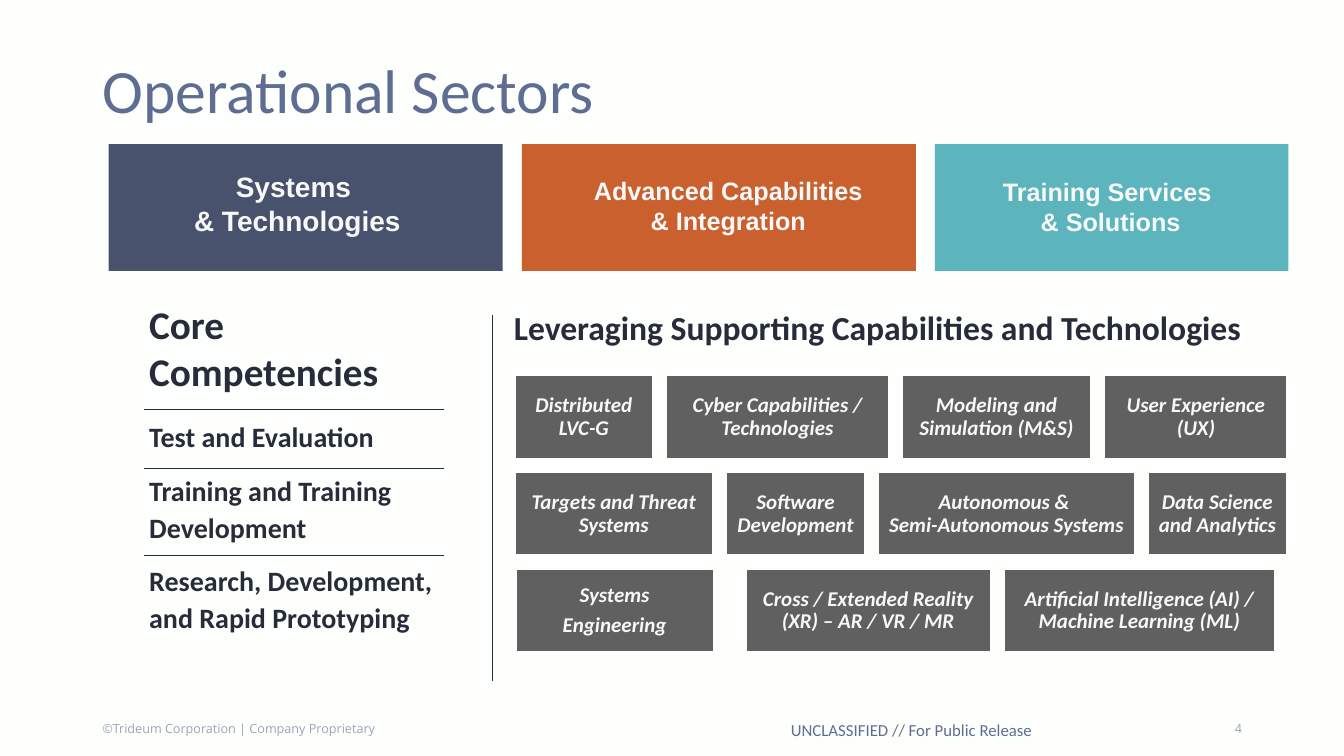
from lxml.etree import SubElement
from pptx import Presentation
from pptx.dml.color import RGBColor
from pptx.enum.shapes import MSO_CONNECTOR, MSO_SHAPE
from pptx.enum.text import MSO_ANCHOR, PP_ALIGN
from pptx.oxml.ns import qn
from pptx.util import Cm, Pt

PAPER = RGBColor(0xFD, 0xFF, 0xFD)
SLATE = RGBColor(0x60, 0x6D, 0x92)
INK = RGBColor(0x27, 0x2C, 0x3B)
MIST = RGBColor(0x9D, 0xA3, 0xB6)
NAVY = RGBColor(0x48, 0x52, 0x6D)
RUST = RGBColor(0xC9, 0x60, 0x2E)
TEAL = RGBColor(0x5C, 0xB5, 0xBD)
GREY = RGBColor(0x5F, 0x60, 0x5F)
PALE = RGBColor(0xF7, 0xF8, 0xF7)

# Lengths are in centimetres; \v is a line break within a paragraph.
SECTOR_LEFT, SECTOR_TOP, SECTOR_HEIGHT, SECTOR_GAP = 2.74, 3.63, 3.2, 0.48
# width, fill, label, label box, text size, top inset
SECTORS = [
    (9.93, NAVY, "Systems \v& Technologies", (4.17, 4.24, 6.65, 1.83), 20, 0.03),
    (9.93, RUST, "Advanced Capabilities & Integration", (14.76, 4.24, 7.19, 1.8), 18, 0.18),
    (8.91, TEAL, "Training Services \v& Solutions", (23.75, 4.42, 8.48, 1.65), 18, 0.03),
]

COMPETENCIES = [
    "Test and Evaluation",
    "Training and Training Development",
    "Research, Development, \vand Rapid Prototyping",
]

# start and end of each rule
RULES = [((12.42, 7.95), (12.42, 17.17))] + [
    ((3.63, y), (11.18, y)) for y in (10.31, 11.79, 14.0)
]

CAPABILITY_TOP, CAPABILITY_HEIGHT, CAPABILITY_PITCH, CAPABILITY_GAP = 9.47, 2.08, 2.44, 0.35
# row, left edge, (paragraphs, width) of neighbouring boxes
CAPABILITIES = [
    (0, 12.98, [
        (["Distributed LVC-G"], 3.47),
        (["Cyber Capabilities / Technologies"], 5.59),
        (["Modeling and Simulation (M&S)"], 4.75),
        (["User Experience (UX)"], 4.6),
    ]),
    (1, 12.98, [
        (["Targets and Threat Systems"], 4.98),
        (["Software Development"], 3.48),
        (["Autonomous & \vSemi-Autonomous Systems"], 6.45),
        (["Data Science and Analytics"], 3.48),
    ]),
    (2, 13.0, [(["Systems", "Engineering"], 4.98)]),
    (2, 18.8, [
        (["Cross / Extended Reality (XR) – AR / VR / MR"], 6.16),
        (["Artificial Intelligence (AI) / Machine Learning (ML)"], 6.81),
    ]),
]


def write(sp, paragraphs, size, color, font="Calibri", bold=False, italic=False,
          align=PP_ALIGN.LEFT, anchor=MSO_ANCHOR.TOP, spacing=None, after=0, margins=None):
    """Fill a shape with paragraphs; margins are left, top, right, bottom in cm."""
    tf = sp.text_frame
    tf.word_wrap = True
    tf.vertical_anchor = anchor
    if margins:
        tf.margin_left, tf.margin_top, tf.margin_right, tf.margin_bottom = map(Cm, margins)
    for i, text in enumerate(paragraphs):
        p = tf.add_paragraph() if i else tf.paragraphs[0]
        p.text = text
        p.alignment = align
        p.line_spacing = spacing
        p.space_after = Pt(after)
        p.font.name, p.font.size = font, Pt(size)
        p.font.bold, p.font.italic = bold, italic
        p.font.color.rgb = color


def add_text(s, box, paragraphs, size, color, **style):
    write(s.shapes.add_textbox(*map(Cm, box)), paragraphs, size, color, **style)


def add_block(s, box, fill):
    sp = s.shapes.add_shape(MSO_SHAPE.RECTANGLE, *map(Cm, box))
    sp.shadow.inherit = False
    sp.fill.solid()
    sp.fill.fore_color.rgb = fill
    sp.line.fill.background()
    return sp


def add_rule(s, start, end):
    line = s.shapes.add_connector(MSO_CONNECTOR.STRAIGHT, *map(Cm, start + end))
    line.line.color.rgb = INK
    line.line.width = Pt(0.5)
    SubElement(line._element.spPr, qn("a:effectLst"))


def add_sectors(s):
    left = SECTOR_LEFT
    for width, fill, label, label_box, size, inset in SECTORS:
        add_block(s, (left, SECTOR_TOP, width, SECTOR_HEIGHT), fill)
        add_text(s, label_box, [label], size, PALE, font="Arial", bold=True,
                 align=PP_ALIGN.CENTER, margins=(0, inset, 0, 0))
        left += width + SECTOR_GAP


def add_capabilities(s):
    for row, left, boxes in CAPABILITIES:
        top = CAPABILITY_TOP + row * CAPABILITY_PITCH
        for paragraphs, width in boxes:
            sp = add_block(s, (left, top, width, CAPABILITY_HEIGHT), GREY)
            sp.line.color.rgb = PAPER
            sp.line.width = Pt(1)
            write(sp, paragraphs, 15, PALE, bold=True, italic=True, align=PP_ALIGN.CENTER,
                  anchor=MSO_ANCHOR.MIDDLE, spacing=0.9, after=5.25, margins=[0.15] * 4)
            left += width + CAPABILITY_GAP


def main():
    prs = Presentation()
    prs.slide_width, prs.slide_height = Cm(33.87), Cm(19.05)
    s = prs.slides.add_slide(prs.slide_layouts[6])
    s.background.fill.solid()
    s.background.fill.fore_color.rgb = PAPER

    add_text(s, (2.33, 1.02, 29.21, 2.46), ["Operational Sectors"], 44, SLATE,
             anchor=MSO_ANCHOR.MIDDLE)
    add_sectors(s)
    add_text(s, (3.51, 7.44, 8.13, 2.64), ["Core Competencies"], 28, INK, bold=True)
    add_text(s, (3.51, 10.36, 8.13, 6.38), COMPETENCIES, 20, INK, bold=True,
             spacing=1.1, after=12)
    add_text(s, (12.7, 7.62, 19.02, 1.27),
             ["Leveraging Supporting Capabilities and Technologies"], 24, INK, bold=True)
    for start, end in RULES:
        add_rule(s, start, end)
    add_capabilities(s)

    add_text(s, (2.33, 17.65, 11.43, 1.02), ["©Trideum Corporation | Company Proprietary"],
             9, MIST, font="Open Sans", anchor=MSO_ANCHOR.BOTTOM)
    add_text(s, (23.93, 17.65, 7.62, 1.02), ["4"], 9, MIST, font="Open Sans",
             align=PP_ALIGN.RIGHT, anchor=MSO_ANCHOR.BOTTOM)
    add_text(s, (11.89, 18.01, 22.17, 1.02), ["UNCLASSIFIED // For Public Release"],
             12, SLATE, align=PP_ALIGN.CENTER)
    prs.save("out.pptx")


if __name__ == "__main__":
    main()
